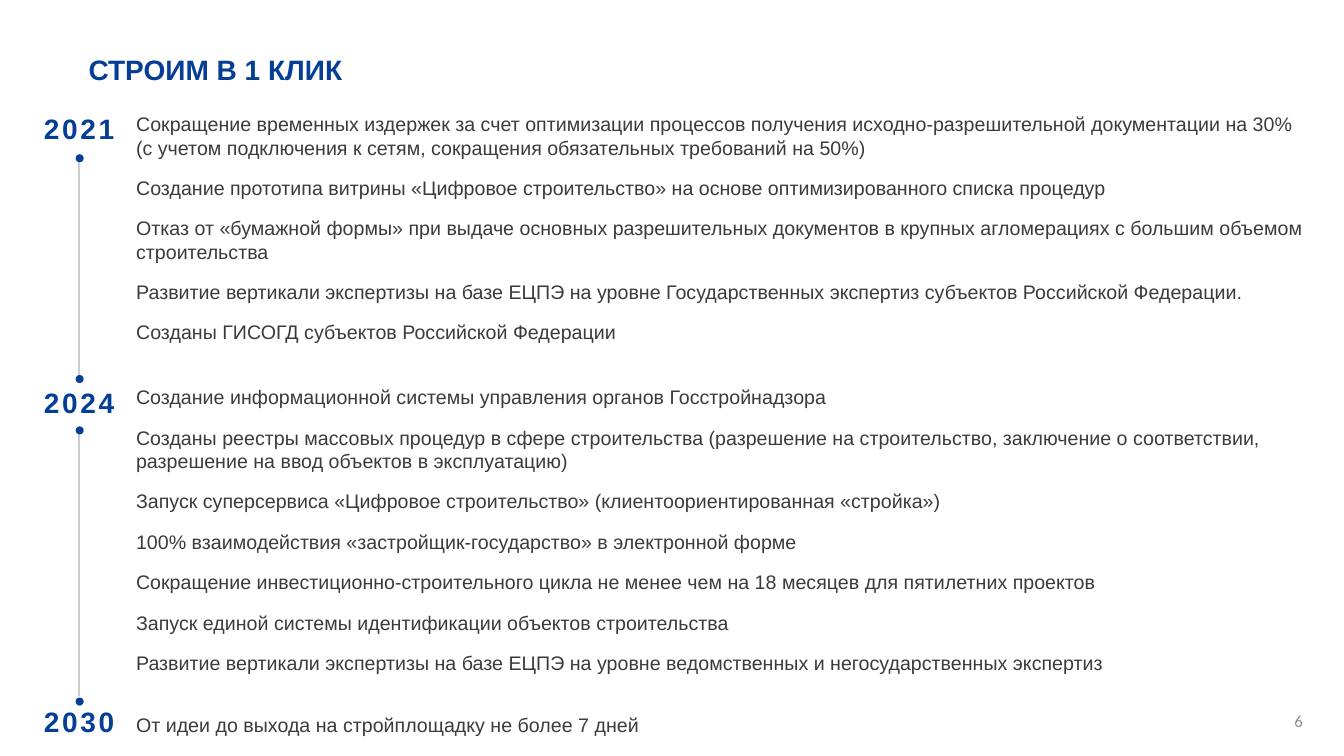
import pptx
import pptx.util
import pptx.dml.color
import pptx.enum.shapes
import pptx.enum.text
import lxml.etree

Inches = pptx.util.Inches
Pt = pptx.util.Pt
ALIGN = pptx.enum.text.PP_ALIGN
SHAPE = pptx.enum.shapes.MSO_SHAPE
BLUE, GRAY, DARK, WHITE = "053E95", "8C8C8C", "3B3B3B", "FFFFFF"


def color(value):
    return pptx.dml.color.RGBColor.from_string(value)


def write(frame, lines, size, ink, bold=False, align=ALIGN.LEFT, font="Arial"):
    frame.word_wrap = True
    frame.text = "\n".join(lines)
    for paragraph in frame.paragraphs:
        paragraph.alignment = align
        paragraph.font.name = font
        paragraph.font.size = Pt(size)
        paragraph.font.bold = bold
        paragraph.font.color.rgb = color(ink)


presentation = pptx.Presentation()
presentation.slide_width = Inches(13.33)
presentation.slide_height = Inches(7.5)
slide = presentation.slides.add_slide(presentation.slide_layouts[6])
shapes = slide.shapes

# Title and page number
title = shapes.add_textbox(Inches(0.78), Inches(0.44), Inches(5.49), Inches(0.54)).text_frame
write(title, ["СТРОИМ В 1 КЛИК"], 20, BLUE, bold=True)
title.paragraphs[0].line_spacing = 0.9
page_number = shapes.add_textbox(Inches(10.02), Inches(6.95), Inches(3), Inches(0.4)).text_frame
write(page_number, ["6"], 12, GRAY, align=ALIGN.RIGHT, font="Calibri")
for frame in (title, page_number):
    frame.vertical_anchor = pptx.enum.text.MSO_ANCHOR.MIDDLE

# Timeline axis, behind the years
axis = shapes.add_connector(pptx.enum.shapes.MSO_CONNECTOR.STRAIGHT,
                            Inches(0.78), Inches(1.56), Inches(0.78), Inches(6.91))
axis.line.color.rgb = color("CCCCCC")
axis.line.width = Pt(1)
lxml.etree.SubElement(axis._element.spPr, pptx.oxml.ns.qn("a:effectLst"))

# Stages: year, top of year, then left-aligned goals: top, width, height, lines
stages = [
    ("2021", 1.02, 1.03, 11.75, 2.48, [
        "Сокращение временных издержек за счет оптимизации процессов получения исходно-разрешительной документации на 30% (с учетом подключения к сетям, сокращения обязательных требований на 50%)",
        "Создание прототипа витрины «Цифровое строительство» на основе оптимизированного списка процедур",
        "Отказ от «бумажной формы» при выдаче основных разрешительных документов в крупных агломерациях с большим объемом строительства",
        "Развитие вертикали экспертизы на базе ЕЦПЭ на уровне Государственных экспертиз субъектов Российской Федерации.",
        "Созданы ГИСОГД субъектов Российской Федерации",
    ]),
    ("2024", 3.74, 3.74, 11.84, 3.05, [
        "Создание информационной системы управления органов Госстройнадзора",
        "Созданы реестры массовых процедур в сфере строительства (разрешение на строительство, заключение о соответствии, разрешение на ввод объектов в эксплуатацию)",
        "Запуск суперсервиса «Цифровое строительство» (клиентоориентированная «стройка»)",
        "100% взаимодействия «застройщик-государство» в электронной форме",
        "Сокращение инвестиционно-строительного цикла не менее чем на 18 месяцев для пятилетних проектов",
        "Запуск единой системы идентификации объектов строительства",
        "Развитие вертикали экспертизы на базе ЕЦПЭ на уровне ведомственных и негосударственных экспертиз",
    ]),
    ("2030", 6.91, 6.99, 10.86, 0.39, [
        "От идеи до выхода на стройплощадку не более 7 дней",
    ]),
]
years = []
for year, year_top, goals_top, goals_width, goals_height, goals in stages:
    year_box = shapes.add_shape(SHAPE.RECTANGLE, Inches(0.22), Inches(year_top),
                                Inches(1.13), Inches(0.54))
    year_box.shadow.inherit = False
    year_box.fill.solid()
    year_box.fill.fore_color.rgb = color(WHITE)
    year_box.line.fill.background()
    write(year_box.text_frame, [year], 20, BLUE, bold=True, align=ALIGN.CENTER)
    year_label = year_box.text_frame.paragraphs[0]
    year_label.line_spacing = 0.9
    year_label.runs[0].font._element.set("spc", "190")
    years.append(year_box)

    goals_box = shapes.add_textbox(Inches(1.27), Inches(goals_top),
                                   Inches(goals_width), Inches(goals_height))
    write(goals_box.text_frame, goals, 14, DARK)
    goals_box.text_frame.auto_size = pptx.enum.text.MSO_AUTO_SIZE.SHAPE_TO_FIT_TEXT
    for goal in goals_box.text_frame.paragraphs:
        goal.space_before = goal.space_after = Pt(6)

    for frame in (year_box.text_frame, goals_box.text_frame):
        frame.margin_left = frame.margin_right = Inches(0.08)
        frame.margin_top = frame.margin_bottom = Inches(0.08)

axis.begin_connect(years[0], 2)
axis.end_connect(years[-1], 0)

# Dots at the ends of each period
for dot_top in (1.53, 3.72, 4.23, 6.92):
    dot = shapes.add_shape(SHAPE.OVAL, Inches(0.75), Inches(dot_top), Inches(0.08), Inches(0.08))
    dot.shadow.inherit = False
    dot.fill.solid()
    dot.fill.fore_color.rgb = color(BLUE)
    dot.line.fill.background()

presentation.save("out.pptx")
